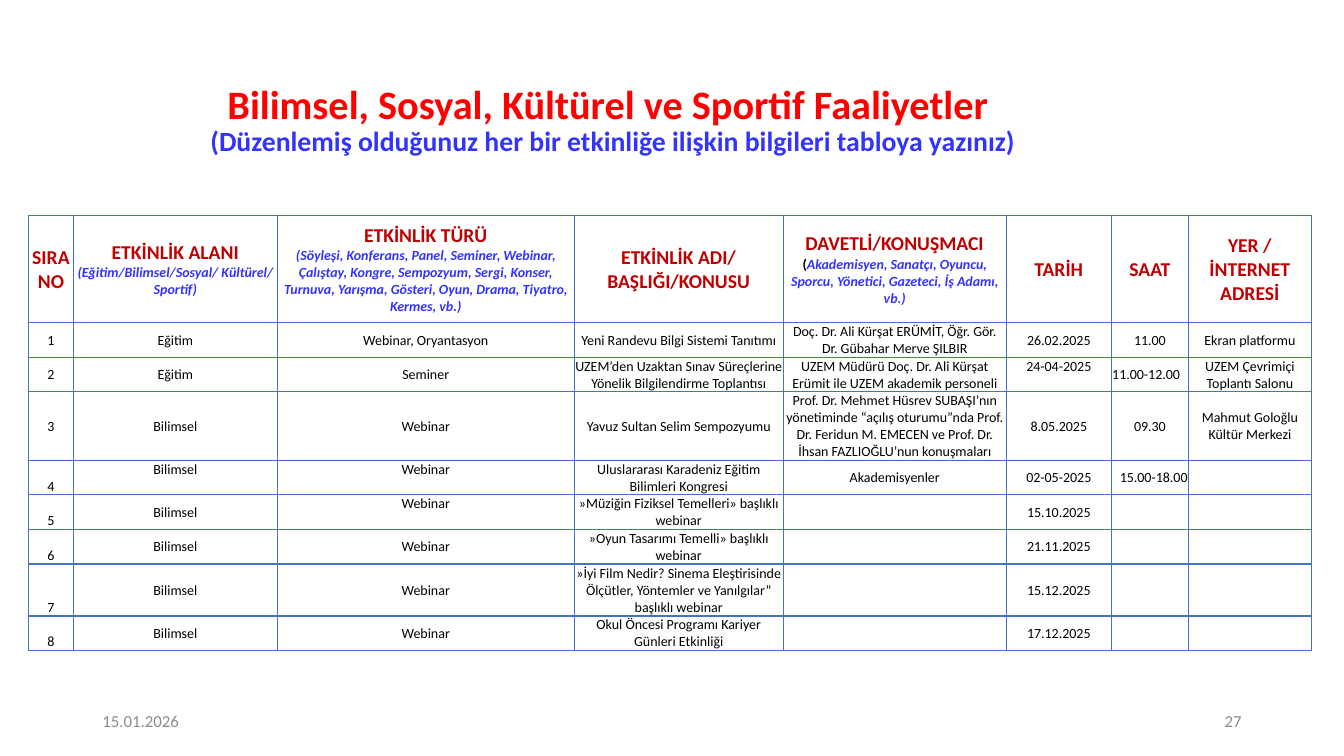
from lxml.etree import SubElement
from pptx import Presentation
from pptx.dml.color import RGBColor
from pptx.enum.text import MSO_ANCHOR as Anchor, MSO_AUTO_SIZE as Fit, PP_ALIGN as Align
from pptx.oxml.ns import qn
from pptx.util import Cm, Pt

RED = RGBColor(0xFF, 0x00, 0x00)
DARK = RGBColor(0xC0, 0x00, 0x00)
BLUE = RGBColor(0x33, 0x33, 0xFF)
LINE = RGBColor(0x44, 0x72, 0xC4)
GRAY = RGBColor(0x8C, 0x8C, 0x8C)
BLACK = RGBColor(0x00, 0x00, 0x00)

HEAD = {"size": Pt(14), "bold": True, "color": DARK}
HINT = {"size": Pt(10), "bold": True, "italic": True, "color": BLUE}
OPEN = {"size": Pt(10), "bold": True, "color": BLACK}
BODY = {"size": Pt(10), "bold": False, "color": BLACK}
FOOT = {"size": Pt(12), "color": GRAY}

# Each heading is a list of paragraphs, each paragraph a list of (text, format) runs.
HEADS = [
    [[("SIRA NO", HEAD)]],
    [[("ETKİNLİK ALANI ", HEAD),
      ("(Eğitim/Bilimsel/Sosyal/ Kültürel/ Sportif)", HINT)]],
    [[("ETKİNLİK TÜRÜ", HEAD)],
     [("(Söyleşi, Konferans, Panel, Seminer, Webinar, Çalıştay, Kongre, Sempozyum, "
       "Sergi, Konser, Turnuva, Yarışma, Gösteri, Oyun, Drama, Tiyatro, Kermes, vb.)", HINT)]],
    [[("ETKİNLİK ADI/ BAŞLIĞI/KONUSU", HEAD)]],
    [[("DAVETLİ/KONUŞMACI ", HEAD), ("(", OPEN),
      ("Akademisyen, Sanatçı, Oyuncu, Sporcu, Yönetici, Gazeteci, İş Adamı, vb.)", HINT)]],
    [[("TARİH", HEAD)]],
    [[("SAAT", HEAD)]],
    [[("YER / İNTERNET ADRESİ", HEAD)]],
]
EVENTS = [
    ("Eğitim", "Webinar, Oryantasyon", "Yeni Randevu Bilgi Sistemi Tanıtımı",
     "Doç. Dr. Ali Kürşat ERÜMİT, Öğr. Gör. Dr. Gübahar Merve ŞILBIR",
     "26.02.2025", "11.00", "Ekran platformu"),
    ("Eğitim", "Seminer",
     "UZEM’den Uzaktan Sınav Süreçlerine Yönelik Bilgilendirme Toplantısı",
     "UZEM Müdürü Doç. Dr. Ali Kürşat Erümit ile UZEM akademik personeli",
     "24-04-2025", "11.00-12.00", "UZEM Çevrimiçi Toplantı Salonu"),
    ("Bilimsel", "Webinar", "Yavuz Sultan Selim Sempozyumu",
     "Prof. Dr. Mehmet Hüsrev SUBAŞI’nın yönetiminde “açılış oturumu”nda Prof. Dr. "
     "Feridun M. EMECEN ve Prof. Dr. İhsan FAZLIOĞLU’nun konuşmaları",
     "8.05.2025", "09.30", "Mahmut Goloğlu Kültür Merkezi"),
    ("Bilimsel", "Webinar", "Uluslararası Karadeniz Eğitim Bilimleri Kongresi",
     "Akademisyenler", "02-05-2025", "15.00-18.00", ""),
    ("Bilimsel", "Webinar", "»Müziğin Fiziksel Temelleri» başlıklı webinar",
     "", "15.10.2025", "", ""),
    ("Bilimsel", "Webinar", "»Oyun Tasarımı Temelli» başlıklı webinar",
     "", "21.11.2025", "", ""),
    ("Bilimsel", "Webinar",
     "»İyi Film Nedir? Sinema Eleştirisinde Ölçütler, Yöntemler ve Yanılgılar” "
     "başlıklı webinar", "", "15.12.2025", "", ""),
    ("Bilimsel", "Webinar", "Okul Öncesi Programı Kariyer Günleri Etkinliği",
     "", "17.12.2025", "", ""),
]
WIDTHS = [1.13, 5.14, 7.48, 5.27, 5.62, 2.65, 1.94, 3.1]
HEIGHTS = [2.69, 0.87, 0.87, 1.73, 0.87, 0.87, 0.87, 1.31, 0.87]
TOPS = {(2, 5), (4, 1), (4, 2), (5, 2)}
SIDES = {(2, 6): Align.LEFT, (4, 6): Align.RIGHT}


class Deck:
    def __init__(self, font):
        self.font = font
        self.show = Presentation()
        self.show.slide_width, self.show.slide_height = Cm(33.87), Cm(19.05)
        self.slide = self.show.slides.add_slide(self.show.slide_layouts[5])

    def run(self, para, text, style):
        run = para.add_run()
        run.text = text
        run.font.name = self.font
        for key, value in style.items():
            if key == "color":
                run.font.color.rgb = value
            else:
                setattr(run.font, key, value)

    def place(self, shape, box):
        for key, value in zip(("left", "top", "width", "height"), box):
            setattr(shape, key, Cm(value))

    def title(self, box, lines):
        shape = self.slide.shapes.title
        self.place(shape, box)
        frame = shape.text_frame
        frame.auto_size, frame.word_wrap = Fit.NONE, True
        frame.vertical_anchor = Anchor.MIDDLE
        para = frame.paragraphs[0]
        para.alignment, para.line_spacing = Align.CENTER, 0.9
        for i, (text, style) in enumerate(lines):
            if i:
                para.add_line_break()
            self.run(para, text, style)

    def text(self, box, text, style, align):
        frame = self.slide.shapes.add_textbox(*map(Cm, box)).text_frame
        frame.word_wrap, frame.vertical_anchor = True, Anchor.MIDDLE
        frame.paragraphs[0].alignment = align
        self.run(frame.paragraphs[0], text, style)

    def cell(self, cell, paras, anchor, align):
        props = cell._tc.get_or_add_tcPr()
        for side in ("L", "R", "T", "B"):
            edge = SubElement(props, qn(f"a:ln{side}"), w=str(Pt(1)))
            fill = SubElement(edge, qn("a:solidFill"))
            SubElement(fill, qn("a:srgbClr"), val=str(LINE))
        cell.fill.background()
        cell.margin_left = cell.margin_right = cell.margin_top = Cm(0.02)
        cell.margin_bottom = 0
        cell.vertical_anchor = anchor
        frame = cell.text_frame
        for i, runs in enumerate(paras):
            para = frame.add_paragraph() if i else frame.paragraphs[0]
            para.alignment = align
            for text, style in runs:
                if text:
                    self.run(para, text, style)

    def table(self, left, top, rows):
        box = left, top, sum(WIDTHS), sum(HEIGHTS)
        table = self.slide.shapes.add_table(len(rows), len(WIDTHS), *map(Cm, box)).table
        table.first_row = table.horz_banding = False
        for col, width in zip(table.columns, WIDTHS):
            col.width = Cm(width)
        for r, (row, height) in enumerate(zip(rows, HEIGHTS)):
            table.rows[r].height = Cm(height)
            for c, paras in enumerate(row):
                anchor = Anchor.TOP if (r, c) in TOPS else Anchor.MIDDLE
                if c == 0 and r > 3:
                    anchor = Anchor.BOTTOM
                self.cell(table.cell(r, c), paras, anchor, SIDES.get((r, c), Align.CENTER))


def main():
    deck = Deck("Calibri")
    deck.title((0.99, 1.93, 28.9, 2.24), [
        ("Bilimsel, Sosyal, Kültürel ve Sportif Faaliyetler ",
         {"size": Pt(28.8), "bold": True, "color": RED}),
        ("(Düzenlemiş olduğunuz her bir etkinliğe ilişkin bilgileri tabloya yazınız)",
         {"size": Pt(19.8), "bold": True, "color": BLUE}),
    ])
    deck.text((2.33, 17.65, 7.62, 1.01), "15.01.2026", FOOT, Align.LEFT)
    deck.text((23.92, 17.65, 7.62, 1.01), "27", FOOT, Align.RIGHT)
    rows = [[[[(text, BODY)]] for text in (str(i), *event)]
            for i, event in enumerate(EVENTS, 1)]
    deck.table(0.72, 5.44, [HEADS, *rows])
    deck.show.save("out.pptx")


if __name__ == "__main__":
    main()
